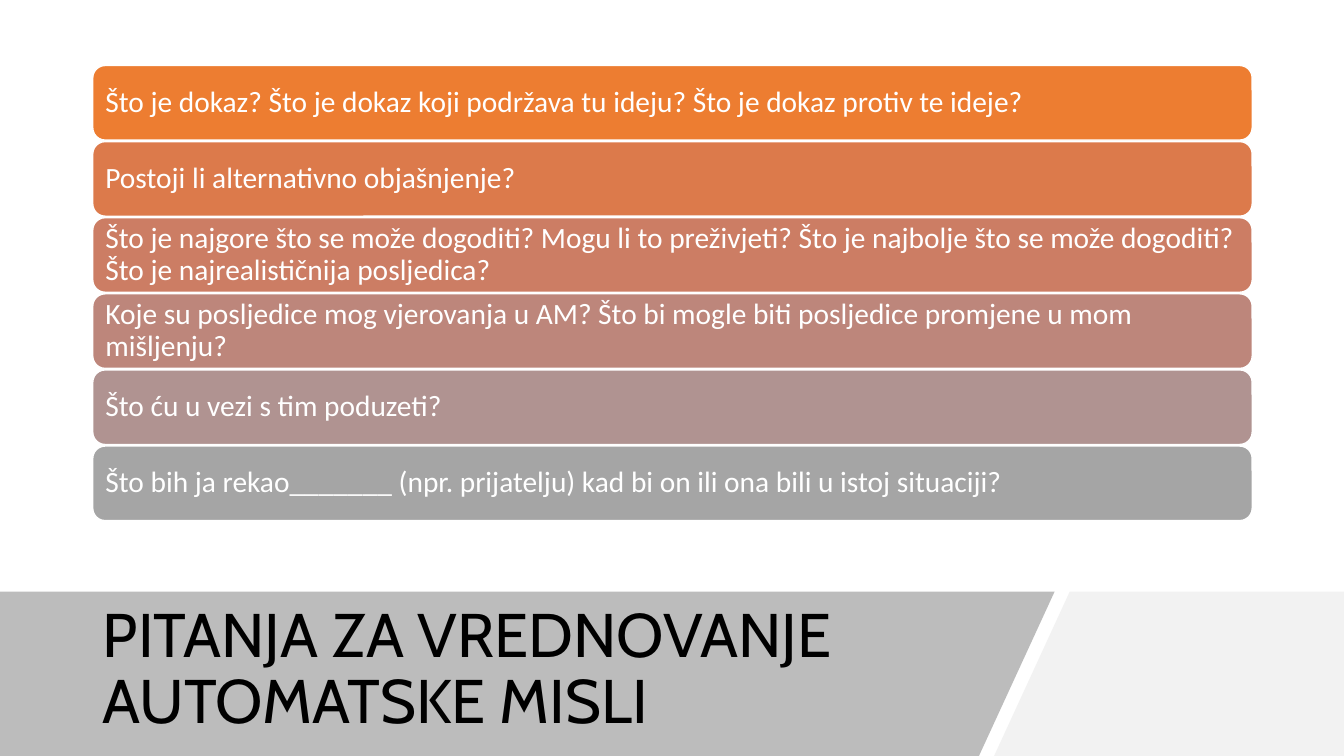
from dataclasses import dataclass

from lxml import etree
from pptx import Presentation
from pptx.dml.color import RGBColor
from pptx.enum.shapes import MSO_SHAPE
from pptx.enum.text import MSO_ANCHOR, MSO_AUTO_SIZE, PP_ALIGN
from pptx.oxml.ns import qn
from pptx.util import Inches, Pt

ROUND = MSO_SHAPE.ROUNDED_RECTANGLE
MIDDLE = MSO_ANCHOR.MIDDLE
NO_FIT = MSO_AUTO_SIZE.NONE
LEFT = PP_ALIGN.LEFT
TITLE_ONLY = 5


@dataclass(frozen=True)
class Theme:
    head_font: str = "Cabin"
    body_font: str = "Calibri"
    head_size: float = 44
    body_size: float = 21
    dark: str = "000000"
    light: str = "FFFFFF"
    band: str = "595959"
    corner: str = "F2F2F2"
    bars: tuple = ("ED7D31", "DC7A4B", "CC7D64", "BD867B", "B09391", "A5A5A5")


class Deck:
    def __init__(self, theme, slide):
        self.theme = theme
        self.slide = slide

    def paint(self, shape, color):
        shape.shadow.inherit = False
        shape.fill.solid()
        shape.fill.fore_color.rgb = RGBColor.from_string(color)

    def label(self, frame, text, font, size, color):
        frame.word_wrap = True
        frame.auto_size = NO_FIT
        frame.vertical_anchor = MIDDLE
        para = frame.paragraphs[0]
        para.alignment = LEFT
        para.line_spacing = 0.9
        run = para.add_run()
        run.text = text
        run.font.name = font
        run.font.size = Pt(size)
        run.font.color.rgb = RGBColor.from_string(color)

    def panel(self, points, color, alpha=100):
        first, *rest = [(Inches(x), Inches(y)) for x, y in points]
        form = self.slide.shapes.build_freeform(*first, scale=1)
        form.add_line_segments(rest, close=True)
        shape = form.convert_to_shape()
        self.paint(shape, color)
        shape.line.fill.background()
        if alpha < 100:
            tint = shape.element.spPr.find(".//" + qn("a:srgbClr"))
            etree.SubElement(tint, qn("a:alpha"), val=str(alpha * 1000))

    def title(self, text, box):
        shape = self.slide.shapes.title
        shape.left, shape.top, shape.width, shape.height = map(Inches, box)
        look = self.theme
        self.label(shape.text_frame, text, look.head_font, look.head_size, look.dark)
        # Bring the title in front of the band
        shape.element.getparent().append(shape.element)

    def bar(self, text, box, color):
        shape = self.slide.shapes.add_shape(ROUND, *map(Inches, box))
        look = self.theme
        self.paint(shape, color)
        shape.line.color.rgb = RGBColor.from_string(look.light)
        shape.line.width = Pt(1)
        frame = shape.text_frame
        frame.margin_left = frame.margin_right = Inches(0.09)
        frame.margin_top = frame.margin_bottom = Inches(0)
        self.label(frame, text, look.body_font, look.body_size, look.light)


QUESTIONS = (
    "Što je dokaz? Što je dokaz koji podržava tu ideju? Što je dokaz protiv te ideje?",
    "Postoji li alternativno objašnjenje?",
    "Što je najgore što se može dogoditi? Mogu li to preživjeti? "
    "Što je najbolje što se može dogoditi? Što je najrealističnija posljedica?",
    "Koje su posljedice mog vjerovanja u AM? "
    "Što bi mogle biti posljedice promjene u mom mišljenju?",
    "Što ću u vezi s tim poduzeti?",
    "Što bih ja rekao_______ (npr. prijatelju) kad bi on ili ona bili u istoj situaciji?",
)


def main():
    prs = Presentation()
    prs.slide_width, prs.slide_height = Inches(13.33), Inches(7.5)
    theme = Theme()
    deck = Deck(theme, prs.slides.add_slide(prs.slide_layouts[TITLE_ONLY]))

    # Bottom band and corner
    top, end = 5.87, 7.5
    deck.panel([(10.61, top), (13.33, top), (13.33, end), (9.86, end)], theme.corner)
    deck.panel([(0, top), (10.46, top), (9.71, end), (0, end)], theme.band, alpha=40)
    deck.title("PITANJA ZA VREDNOVANJE AUTOMATSKE MISLI", (0.92, 6.05, 8.83, 1.2))

    # Stack of questions
    gap = 0.015
    high = 0.74
    for row, (text, color) in enumerate(zip(QUESTIONS, theme.bars)):
        deck.bar(text, (0.92, 0.65 + row * (high + gap), 11.5, high), color)

    prs.save("out.pptx")


if __name__ == "__main__":
    main()
